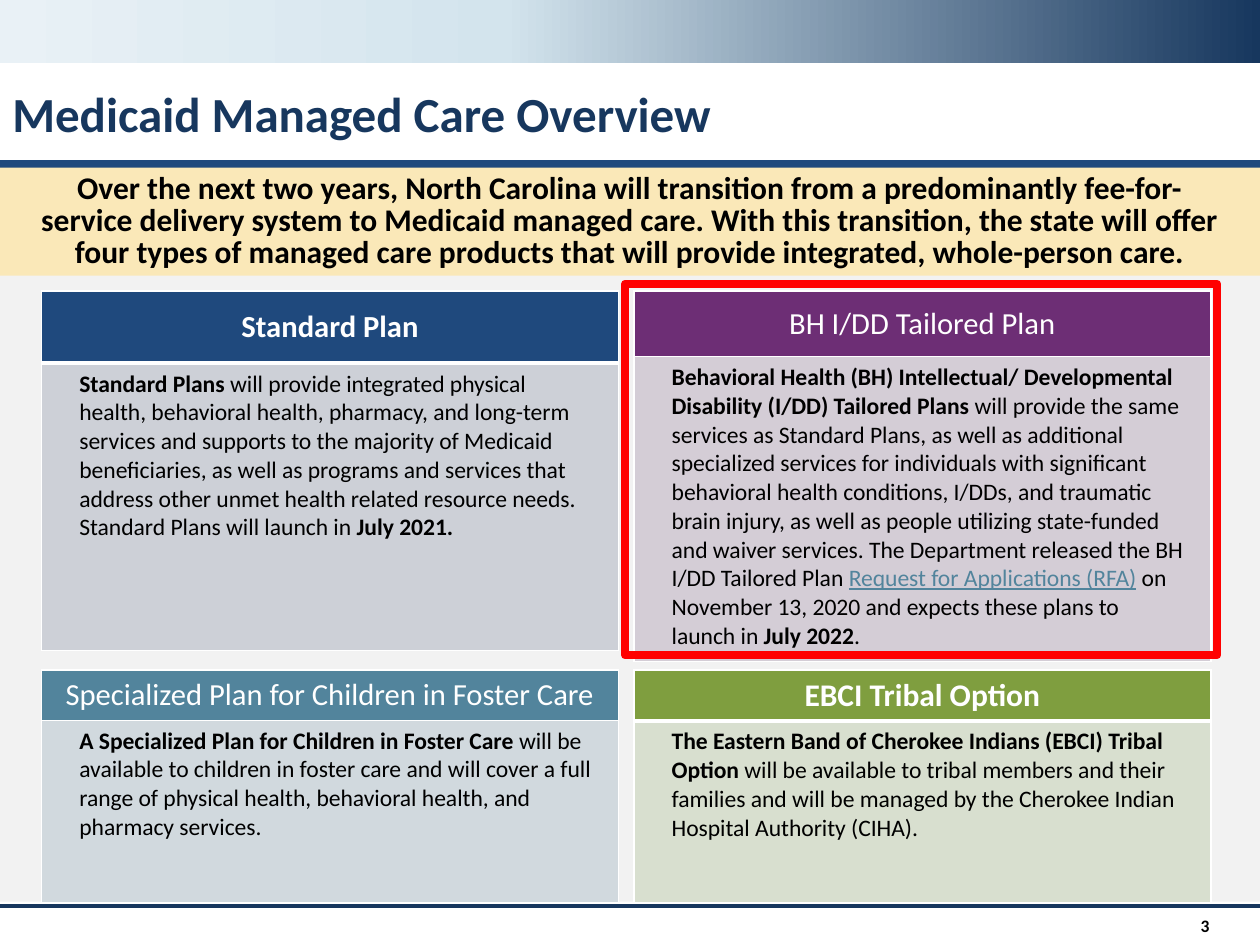
"""Build the Medicaid Managed Care Overview slide."""
from copy import deepcopy

from lxml.etree import SubElement
from pptx import Presentation
from pptx.dml.color import RGBColor
from pptx.enum.shapes import MSO_CONNECTOR, MSO_SHAPE
from pptx.enum.text import MSO_ANCHOR, PP_ALIGN
from pptx.oxml.ns import qn
from pptx.util import Cm, Pt

FONT = "Calibri"
COLORS = {
    "navy": "17375E", "rule": "002060", "blue": "1F497D", "panel": "F2F2F2",
    "cream": "FAE8B8", "red": "FF0000", "white": "FFFFFF", "black": "000000",
    "link": "52849C", "sky": "D3E4ED", "ice": "E9F1F6",
    "blue_tint": "CDD0D7", "purple": "6D2E75", "purple_tint": "D4CDD6",
    "teal": "52849C", "teal_tint": "D1D9DE", "green": "7F9E3F", "green_tint": "D8DFCF",
}
TITLE = "Medicaid Managed Care Overview"
INTRO = ("Over the next two years, North Carolina will transition from a predominantly "
         "fee-for-service delivery system to Medicaid managed care. With this transition, "
         "the state will offer four types of managed care products that will provide "
         "integrated, whole-person care.")
BAND = [(0, "ice"), (0.4, "sky"), (1, "navy")]
RULES = [(18.26, "navy", 2.25), (3.28, "rule", 2), (3.3, "blue", 4.5)]
PLANS = [
    {"name": "Standard Plan", "size": 17.5, "bold": True, "color": "blue",
     "rows": (1.45, 5.79),
     "text": [("Standard Plans ", "bold"),
              ("will provide integrated physical health, behavioral health, pharmacy, and "
               "long-term services and supports to the majority of Medicaid beneficiaries, "
               "as well as programs and services that address other unmet health related "
               "resource needs. Standard Plans will launch in ", ""),
              ("July 2021.", "bold")]},
    {"name": "BH I/DD Tailored Plan", "size": 17.5, "bold": False, "color": "purple",
     "rows": (1.32, 6.15),
     "text": [("Behavioral Health (BH) Intellectual/ Developmental Disability (I/DD) "
               "Tailored Plans ", "bold"),
              ("will provide the same services as Standard Plans, as well as additional "
               "specialized services for individuals with significant behavioral health "
               "conditions, I/DDs, and traumatic brain injury, as well as people utilizing "
               "state-funded and waiver services. The Department released the BH I/DD "
               "Tailored Plan ", ""),
              ("Request for Applications (RFA)", "link"),
              (" on November 13, 2020 and expects these plans to launch in ", ""),
              ("July 2022", "bold"), (".", "")]},
    {"name": "Specialized Plan for Children in Foster Care", "size": 17.5, "bold": False,
     "color": "teal", "rows": (1.01, 3.67),
     "text": [("A Specialized Plan for Children in Foster Care ", "bold"),
              ("will be available to children in foster care and will cover a full range of "
               "physical health, behavioral health, and pharmacy services.", "")]},
    {"name": "EBCI Tribal Option", "size": 18, "bold": True, "color": "green",
     "rows": (1.01, 3.67),
     "text": [("The Eastern Band of Cherokee Indians (EBCI) Tribal Option ", "bold"),
              ("will be available to tribal members and their families and will be managed "
               "by the Cherokee Indian Hospital Authority (CIHA).", "")]},
]
LEFT, PITCH, TABLE_W = 0.84, 11.94, 11.63
TOPS = (5.87, 13.51)


def rgb(name):
    return RGBColor.from_string(COLORS[name])


def set_font(font, size, color, bold=None):
    font.name, font.size, font.bold = FONT, Pt(size), bold
    font.color.rgb = rgb(color)


def add_rect(s, box, fill=None, line=None, width=0):
    sp = s.shapes.add_shape(MSO_SHAPE.RECTANGLE, *map(Cm, box))
    sp.shadow.inherit = False
    if fill:
        sp.fill.solid()
        sp.fill.fore_color.rgb = rgb(fill)
    else:
        sp.fill.background()
    if line:
        sp.line.color.rgb = rgb(line)
        sp.line.width = Pt(width)
    else:
        sp.line.fill.background()
    return sp


def add_band(s):
    sp = add_rect(s, (0, 0, 25.4, 1.27))
    sp.fill.gradient()
    sp.fill.gradient_angle = 0
    stops = sp._element.spPr.find(qn("a:gradFill")).find(qn("a:gsLst"))
    stops.append(deepcopy(stops[0]))
    for stop, (position, color) in zip(sp.fill.gradient_stops, BAND):
        stop.position = position
        stop.color.rgb = rgb(color)


def add_rule(s, y, color, width):
    line = s.shapes.add_connector(MSO_CONNECTOR.STRAIGHT, 0, Cm(y), Cm(25.4), Cm(y))
    line.line.color.rgb = rgb(color)
    line.line.width = Pt(width)
    SubElement(line._element.spPr, qn("a:effectLst"))


def write(tf, text, size, color, align, spacing=None):
    tf.word_wrap = True
    p = tf.paragraphs[0]
    p.alignment = align
    p.line_spacing = spacing
    p.add_run().text = text
    set_font(p.font, size, color, True)


def style_cell(cell, fill, margins, top, bottom):
    tcPr = cell._tc.get_or_add_tcPr()
    for side, width in (("L", 1), ("R", 1), ("T", top), ("B", bottom)):
        ln = SubElement(tcPr, qn(f"a:ln{side}"), w=str(Pt(width)))
        solid = SubElement(ln, qn("a:solidFill"))
        SubElement(solid, qn("a:srgbClr"), val=COLORS["white"])
    cell.fill.solid()
    cell.fill.fore_color.rgb = rgb(fill)
    (cell.margin_left, cell.margin_top,
     cell.margin_right, cell.margin_bottom) = map(Cm, margins)


def add_plan(s, plan, x, y):
    heights = plan["rows"]
    table = s.shapes.add_table(2, 1, Cm(x), Cm(y), Cm(TABLE_W), Cm(sum(heights))).table
    for row, height in zip(table.rows, heights):
        row.height = Cm(height)
    head, body = table.cell(0, 0), table.cell(1, 0)
    divider = 3 if plan["bold"] else 1
    style_cell(head, plan["color"], (0.28, 0.13, 0.28, 0.13), 1, divider)
    style_cell(body, plan["color"] + "_tint", (0.76, 0.13, 0.51, 0.25), divider, 1)

    head.vertical_anchor = MSO_ANCHOR.MIDDLE
    p = head.text_frame.paragraphs[0]
    p.alignment = PP_ALIGN.CENTER
    r = p.add_run()
    r.text = plan["name"]
    set_font(r.font, plan["size"], "white", plan["bold"])

    p = body.text_frame.paragraphs[0]
    for text, style in plan["text"]:
        r = p.add_run()
        r.text = text
        set_font(r.font, 13.5, "link" if style == "link" else "black", style == "bold")
        if style == "link":
            r.font.underline = True


def main():
    prs = Presentation()
    prs.slide_width, prs.slide_height = Cm(25.4), Cm(19.05)
    s = prs.slides.add_slide(prs.slide_layouts[6])

    add_band(s)
    add_rect(s, (0, 3.3, 25.4, 14.88), "panel")
    for rule in RULES:
        add_rule(s, *rule)

    number = s.shapes.add_textbox(Cm(23.06), Cm(18.26), Cm(1.57), Cm(0.79)).text_frame
    number.vertical_anchor = MSO_ANCHOR.MIDDLE
    write(number, "3", 10, "black", PP_ALIGN.RIGHT)

    for i, plan in enumerate(PLANS):
        row, col = divmod(i, 2)
        add_plan(s, plan, LEFT + col * PITCH, TOPS[row])

    title = s.shapes.add_textbox(0, Cm(1.7), Cm(21.79), Cm(1.52)).text_frame
    write(title, TITLE, 28, "navy", PP_ALIGN.LEFT, 0.9)

    intro = add_rect(s, (0, 3.38, 25.4, 2.18), "cream").text_frame
    intro.vertical_anchor = MSO_ANCHOR.MIDDLE
    intro.margin_left = intro.margin_right = Cm(0.76)
    intro.margin_top = intro.margin_bottom = Cm(0.15)
    write(intro, INTRO, 18, "black", PP_ALIGN.CENTER, 0.85)

    add_rect(s, (12.6, 5.72, 11.94, 7.49), line="red", width=4.5)
    prs.save("out.pptx")


if __name__ == "__main__":
    main()
